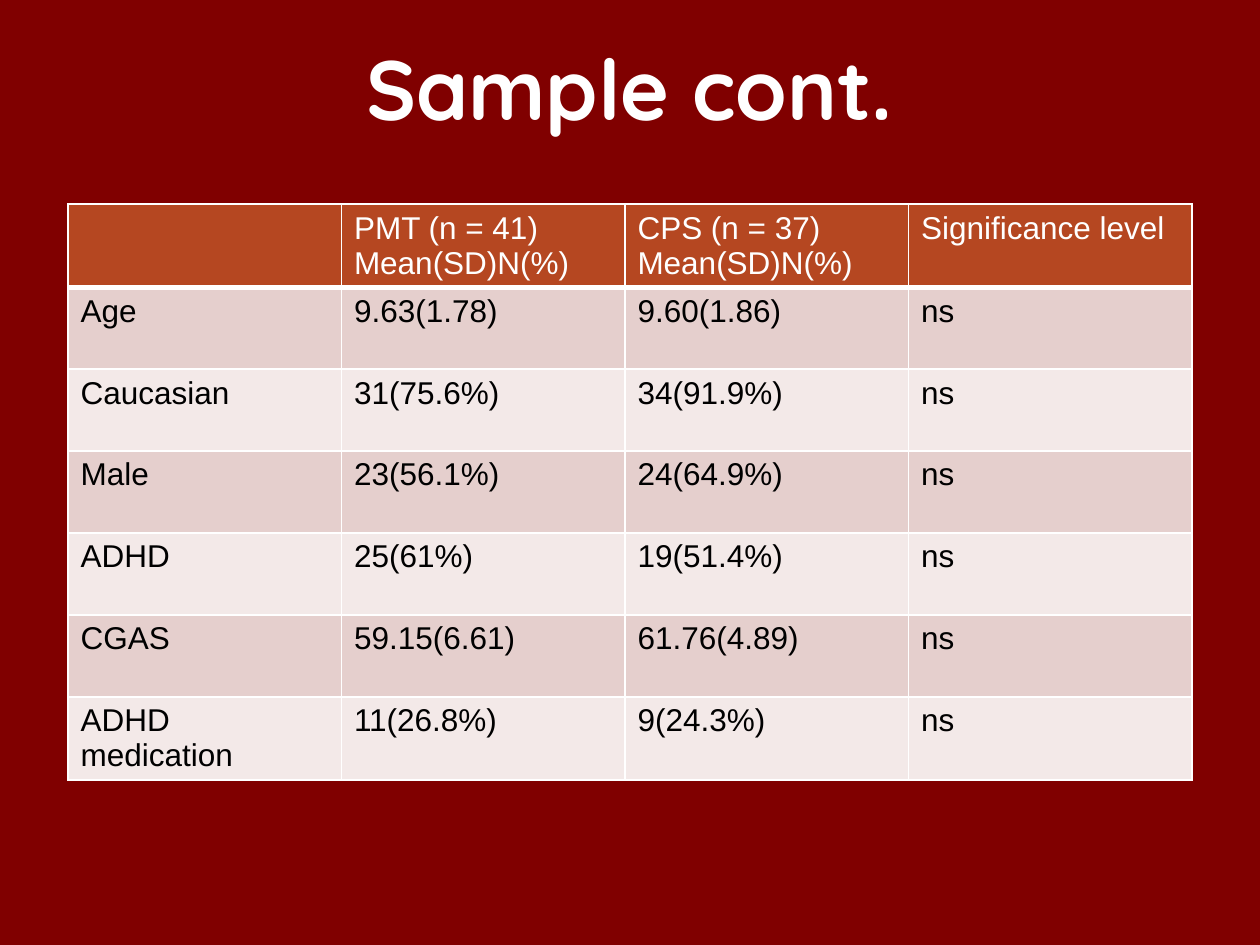
from lxml.etree import SubElement
from pptx import Presentation
from pptx.dml.color import RGBColor
from pptx.enum.text import MSO_ANCHOR, PP_ALIGN
from pptx.oxml.ns import qn
from pptx.util import Inches, Pt

WHITE = "FFFFFF"
BLACK = "000000"
HEAD = "B54721"
BANDS = ["E5CFCD", "F3E9E8"]
WIDTHS = [2.17, 2.25, 2.25, 2.25]
ROWS = [
    ["", "PMT (n = 41)\nMean(SD)N(%)", "CPS (n = 37)\nMean(SD)N(%)", "Significance level"],
    ["Age", "9.63(1.78)", "9.60(1.86)", "ns"],
    ["Caucasian", "31(75.6%)", "34(91.9%)", "ns"],
    ["Male", "23(56.1%)", "24(64.9%)", "ns"],
    ["ADHD", "25(61%)", "19(51.4%)", "ns"],
    ["CGAS", "59.15(6.61)", "61.76(4.89)", "ns"],
    ["ADHD medication", "11(26.8%)", "9(24.3%)", "ns"],
]


def paint(fill, color):
    fill.solid()
    fill.fore_color.rgb = RGBColor.from_string(color)


def add_run(para, text, face, size, color, bold=False):
    run = para.add_run()
    run.text = text
    font = run.font
    font.name, font.size, font.bold = face, Pt(size), bold
    font.color.rgb = RGBColor.from_string(color)


def add_title(slide, text):
    title = slide.shapes.title
    title.left, title.top = Inches(0.85), Inches(0.1)
    title.width, title.height = Inches(8.29), Inches(1.25)
    frame = title.text_frame
    frame.word_wrap = True
    frame.vertical_anchor = MSO_ANCHOR.MIDDLE
    para = frame.paragraphs[0]
    para.alignment = PP_ALIGN.CENTER
    para.line_spacing = 0.95
    add_run(para, text, "Quicksand", 48, WHITE, True)


def add_edges(cell, top, base):
    props = cell._tc.get_or_add_tcPr()
    edges = [("L", 1), ("R", 1), ("T", top), ("B", base)]
    for place, (side, width) in enumerate(edges):
        line = SubElement(props, qn(f"a:ln{side}"), w=str(Pt(width)))
        fill = SubElement(line, qn("a:solidFill"))
        SubElement(fill, qn("a:srgbClr"), val=WHITE)
        props.insert(place, line)


def fill_cell(cell, text, row):
    paint(cell.fill, BANDS[(row - 1) % 2] if row else HEAD)
    add_edges(cell, 3 if row == 1 else 1, 1 if row else 3)
    frame = cell.text_frame
    for num, line in enumerate(text.split("\n")):
        para = frame.add_paragraph() if num else frame.paragraphs[0]
        para.font.size = Pt(18)
        if line:
            add_run(para, line, "Arial", 18, BLACK if row else WHITE)


def add_grid(slide):
    high = 0.65
    frame = slide.shapes.add_table(
        len(ROWS), len(WIDTHS), Inches(0.54), Inches(1.62),
        Inches(sum(WIDTHS)), Inches(high * len(ROWS)))
    table = frame.table
    for col, width in zip(table.columns, WIDTHS):
        col.width = Inches(width)
    for row, texts in enumerate(ROWS):
        table.rows[row].height = Inches(high)
        for col, text in enumerate(texts):
            fill_cell(table.cell(row, col), text, row)


def main():
    deck = Presentation()
    deck.slide_width, deck.slide_height = Inches(10), Inches(7.5)
    slide = deck.slides.add_slide(deck.slide_layouts[5])
    paint(slide.background.fill, "800000")
    add_title(slide, "Sample cont.")
    add_grid(slide)
    deck.save("out.pptx")


if __name__ == "__main__":
    main()
